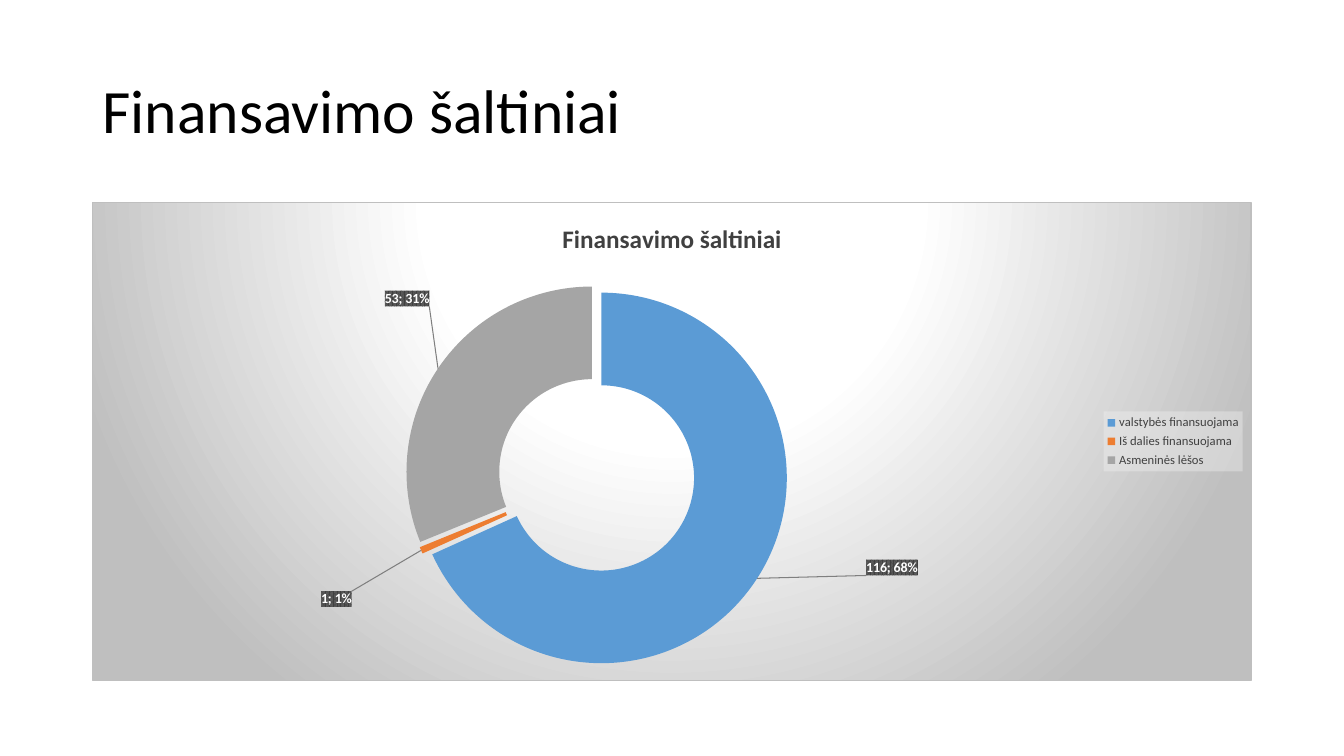
import pptx
import pptx.chart.data
import pptx.enum.chart
import pptx.enum.text
import pptx.util
from dataclasses import dataclass
from lxml import etree
from pptx.dml.color import RGBColor
from pptx.util import Cm, Pt


@dataclass(frozen=True)
class Theme:
    font: str = "Calibri"
    black: str = "000000"
    text: str = "404040"
    white: str = "FFFFFF"
    border: str = "BFBFBF"
    pattern: str = "595959"
    legend: str = "F2F2F2"
    leader: str = "7F7F7F"
    slices: tuple = ("5B9BD5", "ED7D31", "A5A5A5")
    title_size: int = 44
    chart_title_size: int = 18
    label_size: int = 10
    legend_size: int = 9


T = Theme()
NS = ('xmlns:c="http://schemas.openxmlformats.org/drawingml/2006/chart" '
      'xmlns:a="http://schemas.openxmlformats.org/drawingml/2006/main"')


def xml(text):
    """Parse chart XML, adding the namespaces to its first tag."""
    tag, rest = text.split(">", 1)
    return pptx.oxml.parse_xml(f"{tag} {NS}>{rest}")


def style(font, size, color, bold=False):
    font.name, font.size, font.bold = T.font, Pt(size), bold
    font.color.rgb = RGBColor.from_string(color)


prs = pptx.Presentation()
prs.slide_width, prs.slide_height = Cm(33.87), Cm(19.05)
s = prs.slides.add_slide(prs.slide_layouts[5])
left, width = Cm(2.33), Cm(29.21)

# Slide title
title = s.shapes.title
title.left, title.top, title.width, title.height = left, Cm(1.01), width, Cm(3.68)
tf = title.text_frame
tf.text = "Finansavimo šaltiniai"
tf.vertical_anchor = pptx.enum.text.MSO_ANCHOR.MIDDLE
p = tf.paragraphs[0]
p.alignment = pptx.enum.text.PP_ALIGN.LEFT
p.line_spacing = 0.9
style(p.font, T.title_size, T.black)

# Doughnut chart
data = pptx.chart.data.CategoryChartData()
data.categories = ["valstybės finansuojama", "Iš dalies finansuojama", "Asmeninės lėšos"]
data.add_series("Series 1", (116, 1, 53))
chart = s.shapes.add_chart(pptx.enum.chart.XL_CHART_TYPE.DOUGHNUT_EXPLODED,
                           left, Cm(5.08), width, Cm(12.09), data).chart
style(chart.font, T.label_size, T.black)
plot = chart.plots[0]
plot.vary_by_categories = True
series = plot.series[0]
for i, color in enumerate(T.slices):
    fill = series.points[i].format.fill
    fill.solid()
    fill.fore_color.rgb = RGBColor.from_string(color)
for explosion in series._element.xpath(".//c:explosion"):
    explosion.set("val", "6")
plot._element.xpath("c:holeSize")[0].set("val", "50")

# Chart title
chart.has_title = True
tf = chart.chart_title.text_frame
tf.text = "Finansavimo šaltiniai"
style(tf.paragraphs[0].font, T.chart_title_size, T.text, bold=True)
chart.chart_title.include_in_layout = False

# Legend
chart.has_legend = True
chart.legend.position = pptx.enum.chart.XL_LEGEND_POSITION.RIGHT
chart.legend.include_in_layout = False
style(chart.legend.font, T.legend_size, T.text)
chart.legend._element.xpath("c:txPr")[0].addprevious(xml(
    f'<c:spPr><a:solidFill><a:srgbClr val="{T.legend}"><a:alpha val="39000"/>'
    '</a:srgbClr></a:solidFill></c:spPr>'))

# Plot position inside the chart
plot_area = chart._chartSpace.chart.plotArea
for layout in plot_area.xpath("c:layout"):
    plot_area.remove(layout)
plot_area.insert(0, xml(
    '<c:layout><c:manualLayout><c:layoutTarget val="inner"/>'
    '<c:xMode val="edge"/><c:yMode val="edge"/><c:x val="0.27"/><c:y val="0.17"/>'
    '<c:w val="0.33"/><c:h val="0.8"/></c:manualLayout></c:layout>'))

# Data labels, moved off the ring and tied to it by leader lines
look = (f'<c:spPr><a:pattFill prst="pct75"><a:fgClr><a:srgbClr val="{T.text}"/></a:fgClr>'
        f'<a:bgClr><a:srgbClr val="{T.pattern}"/></a:bgClr></a:pattFill></c:spPr>'
        f'<c:txPr><a:bodyPr/><a:p><a:pPr><a:defRPr sz="{T.label_size * 100}" b="1">'
        f'<a:solidFill><a:srgbClr val="{T.white}"/></a:solidFill>'
        f'<a:latin typeface="{T.font}"/></a:defRPr></a:pPr></a:p></c:txPr>'
        '<c:showLegendKey val="0"/><c:showVal val="1"/><c:showCatName val="0"/>'
        '<c:showSerName val="0"/><c:showPercent val="1"/><c:showBubbleSize val="0"/>'
        '<c:separator>; </c:separator>')
offsets = [(0.15, 0.03), (-0.11, 0.14), (-0.06, -0.2)]
moved = "".join(
    f'<c:dLbl><c:idx val="{i}"/><c:layout><c:manualLayout><c:x val="{x}"/><c:y val="{y}"/>'
    f'</c:manualLayout></c:layout>{look}</c:dLbl>' for i, (x, y) in enumerate(offsets))
line = (f'<c:spPr><a:ln w="9525"><a:solidFill><a:srgbClr val="{T.leader}"/>'
        '</a:solidFill></a:ln></c:spPr>')
for labels in series._element.xpath("c:dLbls"):
    series._element.remove(labels)
series._element.xpath("c:cat")[0].addprevious(xml(
    f'<c:dLbls>{moved}{look}<c:showLeaderLines val="1"/>'
    f'<c:leaderLines>{line}</c:leaderLines></c:dLbls>'))

# Chart background: radial gradient centred above the frame
stops = "".join(f'<a:gs pos="{pos * 1000}"><a:srgbClr val="{color}"/></a:gs>'
                for pos, color in [(0, T.white), (39, T.white), (100, T.border)])
chart._chartSpace.chart.addnext(xml(
    f'<c:spPr><a:gradFill><a:gsLst>{stops}</a:gsLst><a:path path="circle">'
    '<a:fillToRect l="50000" t="-80000" r="50000" b="180000"/></a:path></a:gradFill>'
    f'<a:ln w="9525"><a:solidFill><a:srgbClr val="{T.border}"/></a:solidFill></a:ln></c:spPr>'))

prs.save("out.pptx")
